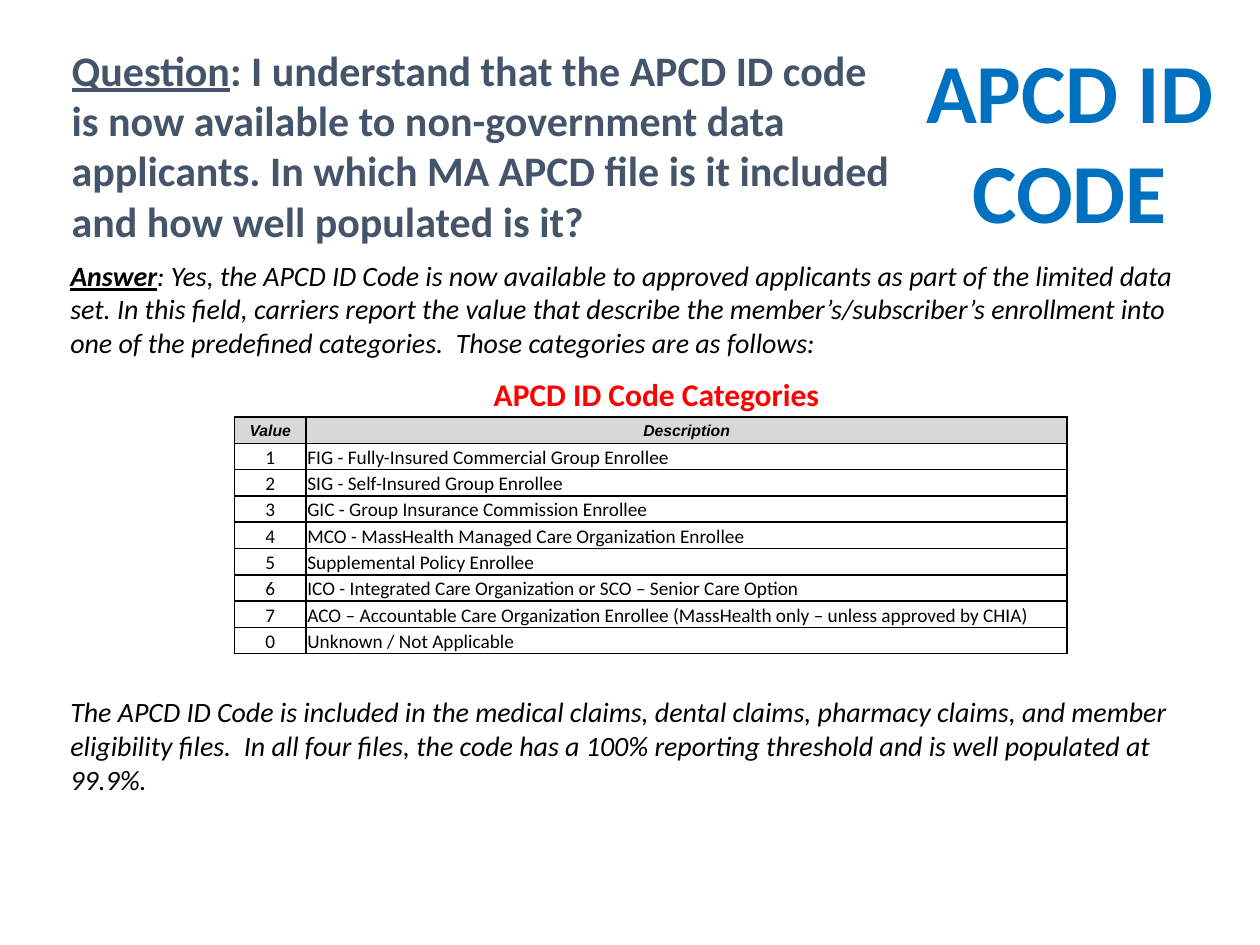
from dataclasses import dataclass
from typing import Any

from lxml.etree import SubElement
from pptx import Presentation
from pptx.dml.color import RGBColor
from pptx.enum.text import MSO_ANCHOR, MSO_AUTO_SIZE, PP_ALIGN
from pptx.oxml.ns import qn
from pptx.util import Emu, Inches, Pt

COLUMN = ROW = Inches(0.1)
BLACK = "000000"


@dataclass
class Area:
    left: float
    top: float
    width: float
    height: float

    def box(self) -> list[Emu]:
        return [Emu(round(self.left * COLUMN)), Emu(round(self.top * ROW)),
                Emu(round(self.width * COLUMN)), Emu(round(self.height * ROW))]


@dataclass
class Words:
    text: str
    size: float
    color: str = BLACK
    bold: bool = False
    italic: bool = False
    underline: bool = False
    name: str = "Calibri"


@dataclass
class Passage:
    area: Area
    paragraphs: list[list[Words]]
    wrap: bool = True
    gap: float = 0


def rgb(color: str) -> RGBColor:
    return RGBColor.from_string(color)


def apply(target: Any, values: dict[str, Any]) -> None:
    for key, value in values.items():
        setattr(target, key, value)


def write(paragraph: Any, words: Words) -> Any:
    run = paragraph.add_run()
    run.text = words.text
    apply(run.font, {"name": words.name, "size": Pt(words.size), "bold": words.bold,
                     "italic": words.italic, "underline": words.underline})
    run.font.color.rgb = rgb(words.color)
    return run


def add_line(parent: Any, tag: str, color: str, width: float) -> Any:
    line = SubElement(parent, qn(tag), w=str(Pt(width)))
    fill = SubElement(line, qn("a:solidFill"))
    SubElement(fill, qn("a:srgbClr"), val=color)
    return line


def add_title(slide: Any, area: Area, words: Words) -> None:
    title = slide.shapes.title
    apply(title, dict(zip(("left", "top", "width", "height"), area.box())))
    apply(title.text_frame, {"vertical_anchor": MSO_ANCHOR.TOP, "word_wrap": True,
                             "auto_size": MSO_AUTO_SIZE.NONE})
    paragraph = title.text_frame.paragraphs[0]
    paragraph.alignment = PP_ALIGN.CENTER
    properties = write(paragraph, words).font._element
    properties.insert(0, add_line(properties, "a:ln", "FFFFFF", 1.06))


def add_passage(slide: Any, passage: Passage) -> None:
    frame = slide.shapes.add_textbox(*passage.area.box()).text_frame
    frame.word_wrap = passage.wrap
    for index, pieces in enumerate(passage.paragraphs):
        paragraph = frame.add_paragraph() if index else frame.paragraphs[0]
        if index:
            paragraph.space_before = Pt(passage.gap)
        for words in pieces:
            write(paragraph, words)


def fill_cell(cell: Any, words: Words, centered: bool, header: bool) -> None:
    apply(cell, {"margin_left": Inches(0.01), "margin_right": Inches(0.01),
                 "margin_top": Inches(0.01), "margin_bottom": 0,
                 "vertical_anchor": MSO_ANCHOR.MIDDLE if header else MSO_ANCHOR.BOTTOM})
    paragraph = cell.text_frame.paragraphs[0]
    paragraph.alignment = PP_ALIGN.CENTER if centered else PP_ALIGN.LEFT
    write(paragraph, words)
    properties = cell._tc.get_or_add_tcPr()
    for side in ("L", "R", "T", "B"):
        add_line(properties, f"a:ln{side}", BLACK, 1)
    if header:
        cell.fill.solid()
        cell.fill.fore_color.rgb = rgb("D8D8D8")
    else:
        cell.fill.background()


def add_categories(slide: Any, area: Area, widths: list[float],
                   rows: list[tuple[str, str]]) -> None:
    table = slide.shapes.add_table(len(rows), len(widths), *area.box()).table
    apply(table, {"first_row": False, "horz_banding": False})
    for column, width in zip(table.columns, widths):
        column.width = Emu(round(width * COLUMN))
    for row_index, row in enumerate(rows):
        header = row_index == 0
        for column_index, text in enumerate(row):
            words = (Words(text, 9, bold=True, italic=True, name="Arial")
                     if header else Words(text, 11))
            fill_cell(table.cell(row_index, column_index), words,
                      header or column_index == 0, header)


CATEGORIES = [
    ("Value", "Description"),
    ("1", "FIG - Fully-Insured Commercial Group Enrollee"),
    ("2", "SIG - Self-Insured Group Enrollee"),
    ("3", "GIC - Group Insurance Commission Enrollee"),
    ("4", "MCO - MassHealth Managed Care Organization Enrollee"),
    ("5", "Supplemental Policy Enrollee"),
    ("6", "ICO - Integrated Care Organization or SCO – Senior Care Option"),
    ("7", "ACO – Accountable Care Organization Enrollee "
          "(MassHealth only – unless approved by CHIA)"),
    ("0", "Unknown / Not Applicable"),
]

QUESTION = Passage(Area(4.7, 3, 67.9, 17.2), [[
    Words("Question", 24, "44546A", bold=True, underline=True),
    Words(": I understand that the APCD ID code is now available to non-government "
          "data applicants. In which MA APCD file is it included and how well "
          "populated is it?", 24, "44546A", bold=True),
]])

ANSWER = Passage(Area(4.6, 20, 91.8, 44.1), [
    [Words("Answer", 16, bold=True, italic=True, underline=True),
     Words(": Yes, the APCD ID Code is now available to approved applicants as part "
           "of the limited data set. In this field, carriers report the value that "
           "describe the member’s/subscriber’s enrollment into one of the predefined "
           "categories.  Those categories are as follows:", 16, italic=True)],
    [Words("The APCD ID Code is included in the medical claims, dental claims, "
           "pharmacy claims, and member eligibility files.  In all four files, the "
           "code has a 100% reporting threshold and is well populated at 99.9%.",
           16, italic=True)],
], gap=192)

CAPTION = Passage(Area(38.2, 29.3, 28.1, 4),
                  [[Words("APCD ID Code Categories", 18, "FF0000", bold=True)]],
                  wrap=False)


def main() -> None:
    deck = Presentation()
    apply(deck, {"slide_width": 100 * COLUMN, "slide_height": 75 * ROW})
    slide = deck.slides.add_slide(deck.slide_layouts[5])
    add_title(slide, Area(71.1, 2.6, 27.6, 17.2),
              Words("APCD ID CODE", 48, "0070C0", bold=True))
    for passage in (QUESTION, ANSWER, CAPTION):
        add_passage(slide, passage)
    add_categories(slide, Area(18.6, 33.1, 66.1, 18.8), [5.7, 60.4], CATEGORIES)
    deck.save("out.pptx")


if __name__ == "__main__":
    main()
